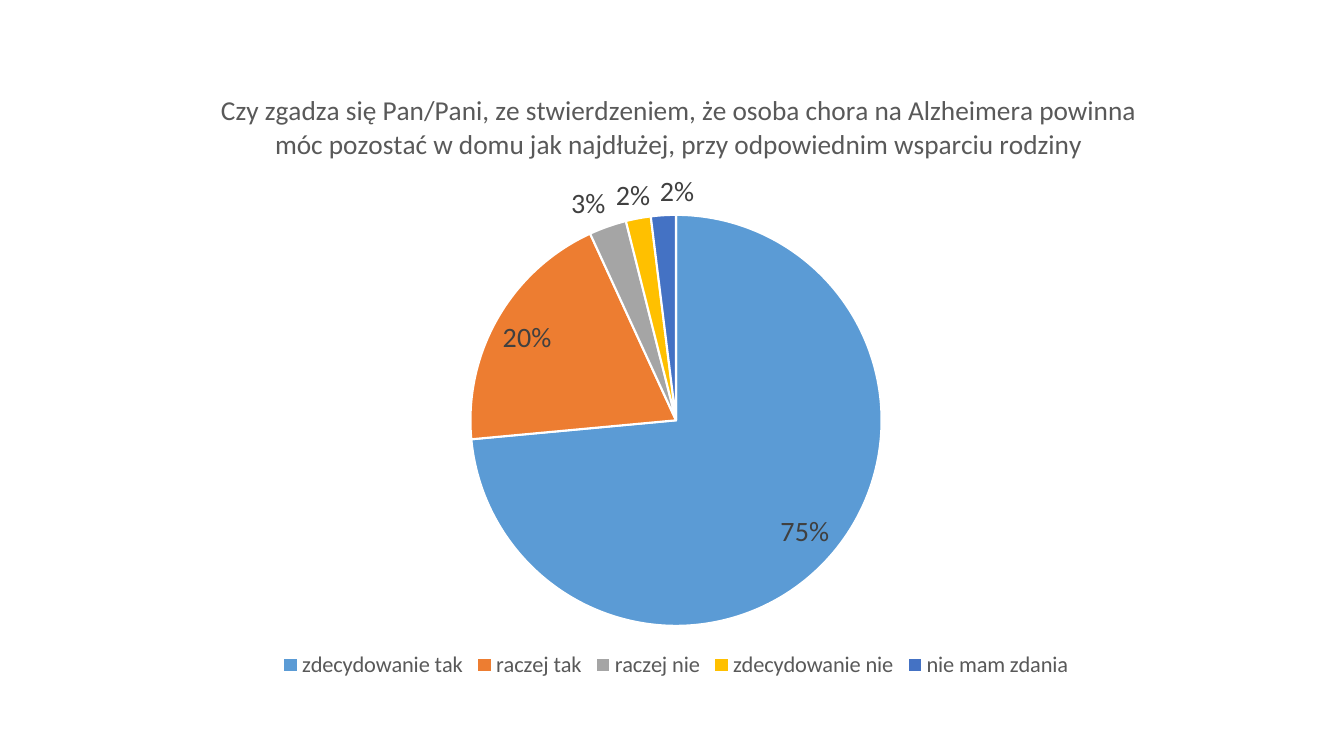
from lxml import etree
from pptx import Presentation
from pptx.chart.data import CategoryChartData
from pptx.dml.color import RGBColor
from pptx.enum.chart import XL_CHART_TYPE as ChartType
from pptx.enum.chart import XL_LABEL_POSITION as LabelPosition
from pptx.enum.chart import XL_LEGEND_POSITION as LegendPosition
from pptx.oxml.ns import qn
from pptx.util import Emu, Pt

PX = 9144  # 100 px to the inch
FONT = "Calibri"
COLORS = {
    "title": "595959",
    "legend": "595959",
    "label": "404040",
    "border": "FFFFFF",
}
QUESTION = [
    "Czy zgadza się Pan/Pani, ze stwierdzeniem, że osoba chora na Alzheimera powinna",
    "móc pozostać w domu jak najdłużej, przy odpowiednim wsparciu rodziny",
]
ANSWERS = [
    ("zdecydowanie tak", 75, "5B9BD5"),
    ("raczej tak", 20, "ED7D31"),
    ("raczej nie", 3, "A5A5A5"),
    ("zdecydowanie nie", 2, "FFC000"),
    ("nie mam zdania", 2, "4472C4"),
]


def px(length):
    return Emu(length * PX)


def rgb(value):
    return RGBColor.from_string(value)


def style_font(font, size, color):
    font.name = FONT
    font.size = Pt(size)
    font.bold = False
    font.color.rgb = rgb(color)


def set_layout(parent, index, **settings):
    """Give a chart part a manual layout, as fractions of the chart area."""
    for old in parent.findall(qn("c:layout")):
        parent.remove(old)
    layout = etree.Element(qn("c:layout"))
    manual = etree.SubElement(layout, qn("c:manualLayout"))
    for name, value in settings.items():
        etree.SubElement(manual, qn(f"c:{name}")).set("val", str(value))
    parent.insert(index, layout)


def add_question(chart):
    chart.has_title = True
    title = chart.chart_title
    title.include_in_layout = False
    frame = title.text_frame
    frame.text = "\n".join(QUESTION)
    for para in frame.paragraphs:
        for span in para.runs:
            style_font(span.font, 19.5, COLORS["title"])
    set_layout(title._element, 1, xMode="edge", yMode="edge", x=0.11, y=0.04)


def style_slices(plot):
    plot.vary_by_categories = True
    for index, (_, _, color) in enumerate(ANSWERS):
        piece = plot.series[0].points[index].format
        piece.fill.solid()
        piece.fill.fore_color.rgb = rgb(color)
        piece.line.color.rgb = rgb(COLORS["border"])
        piece.line.width = Pt(1.5)


def add_labels(plot):
    plot.has_data_labels = True
    labels = plot.data_labels
    labels.show_value = True
    labels.show_percentage = False
    labels.number_format = '0"%"'
    labels.number_format_is_linked = False
    labels.position = LabelPosition.BEST_FIT
    style_font(labels.font, 20, COLORS["label"])


def add_legend(chart):
    chart.has_legend = True
    chart.legend.position = LegendPosition.BOTTOM
    chart.legend.include_in_layout = False
    style_font(chart.legend.font, 16, COLORS["legend"])


def add_survey_pie(page, box):
    data = CategoryChartData(number_format="0")
    data.categories = [name for name, _, _ in ANSWERS]
    data.add_series("Odpowiedzi", [share for _, share, _ in ANSWERS])
    chart = page.shapes.add_chart(ChartType.PIE, *map(px, box), data).chart
    style_font(chart.font, 16, COLORS["legend"])
    add_question(chart)
    plot = chart.plots[0]
    style_slices(plot)
    add_labels(plot)
    add_legend(chart)
    plot_area = chart._chartSpace.find(f".//{qn('c:plotArea')}")
    set_layout(plot_area, 0, layoutTarget="inner", xMode="edge", yMode="edge",
               x=0.325, y=0.24, w=0.35, h=0.67)


def main():
    deck = Presentation()
    deck.slide_width, deck.slide_height = px(1333), px(750)
    page = deck.slides.add_slide(deck.slide_layouts[6])
    add_survey_pie(page, (88, 64, 1165, 614))
    deck.save("out.pptx")


if __name__ == "__main__":
    main()
